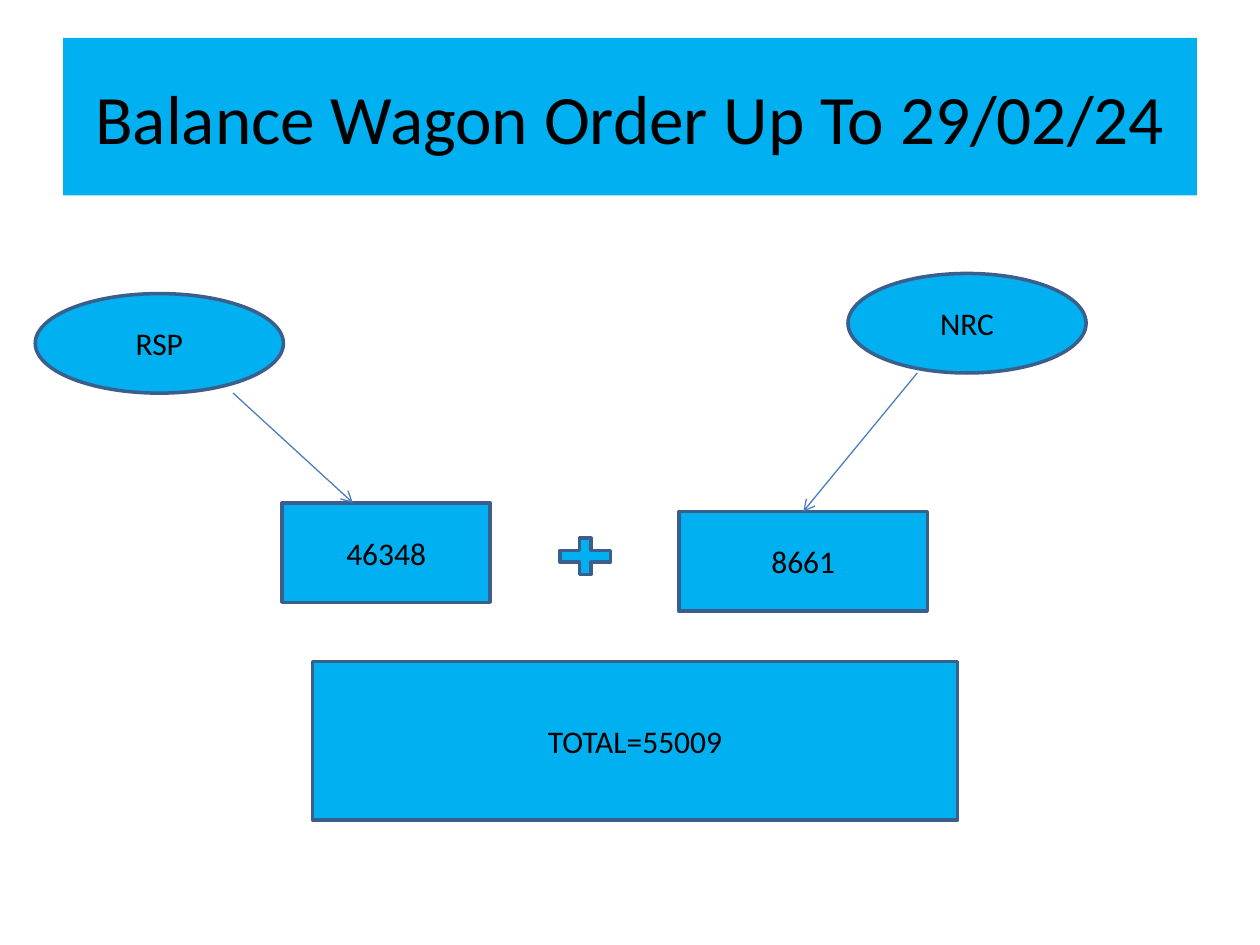
"""Build the slide that adds up the balance wagon orders."""
from lxml.etree import SubElement
from pptx import Presentation
from pptx.dml.color import RGBColor
from pptx.enum.shapes import MSO_CONNECTOR as Connector, MSO_SHAPE as Shape
from pptx.enum.text import MSO_ANCHOR as Anchor, PP_ALIGN as Align
from pptx.oxml.ns import qn
from pptx.util import Inches, Pt

COLORS = {"fill": "00B0F0", "outline": "3A5F8C", "arrow": "4B7EBC", "text": "000000"}


class SlideBuilder:
    def __init__(self, slide, font="Calibri"):
        self.slide = slide
        self.font = font

    def color(self, name):
        return RGBColor.from_string(COLORS[name])

    def paint(self, shape):
        shape.fill.solid()
        shape.fill.fore_color.rgb = self.color("fill")

    def label(self, shape, text, size):
        frame = shape.text_frame
        frame.text = text
        frame.word_wrap = True
        frame.vertical_anchor = Anchor.MIDDLE
        paragraph = frame.paragraphs[0]
        paragraph.alignment = Align.CENTER
        paragraph.font.name = self.font
        paragraph.font.size = Pt(size)
        paragraph.font.color.rgb = self.color("text")

    def title(self, text, left, top, width, height):
        shape = self.slide.shapes.title
        shape.left, shape.top = Inches(left), Inches(top)
        shape.width, shape.height = Inches(width), Inches(height)
        self.paint(shape)
        self.label(shape, text, 39.6)

    def shape(self, kind, left, top, width, height, text=None):
        shape = self.slide.shapes.add_shape(
            kind, Inches(left), Inches(top), Inches(width), Inches(height))
        shape.shadow.inherit = False
        self.paint(shape)
        shape.line.color.rgb = self.color("outline")
        shape.line.width = Pt(2)
        if text:
            self.label(shape, text, 18)
        return shape

    def arrow(self, start, end):
        connector = self.slide.shapes.add_connector(
            Connector.STRAIGHT, *(Inches(value) for value in start + end))
        connector.line.color.rgb = self.color("arrow")
        connector.line.width = Pt(0.75)
        properties = connector.element.spPr
        SubElement(properties.find(qn("a:ln")), qn("a:tailEnd"), type="arrow")
        SubElement(properties, qn("a:effectLst"))
        return connector


def main():
    presentation = Presentation()
    presentation.slide_width, presentation.slide_height = Inches(10), Inches(7.5)
    builder = SlideBuilder(presentation.slides.add_slide(presentation.slide_layouts[5]))

    builder.title("Balance Wagon Order Up To 29/02/24", 0.5, 0.3, 9, 1.25)
    builder.shape(Shape.OVAL, 0.28, 2.33, 1.97, 0.79, "RSP")
    builder.shape(Shape.OVAL, 6.73, 2.17, 1.89, 0.79, "NRC")
    builder.shape(Shape.RECTANGLE, 2.24, 3.99, 1.65, 0.79, "46348")
    nrc_order = builder.shape(Shape.RECTANGLE, 5.39, 4.06, 1.97, 0.79, "8661")
    builder.shape(Shape.MATH_PLUS, 4.37, 4.22, 0.55, 0.39)
    builder.arrow((1.85, 3.12), (2.8, 3.99))
    builder.arrow((7.28, 2.96), (6.38, 4.06)).end_connect(nrc_order, 0)
    builder.shape(Shape.RECTANGLE, 2.48, 5.25, 5.12, 1.26, "TOTAL=55009")

    presentation.save("out.pptx")


if __name__ == "__main__":
    main()
